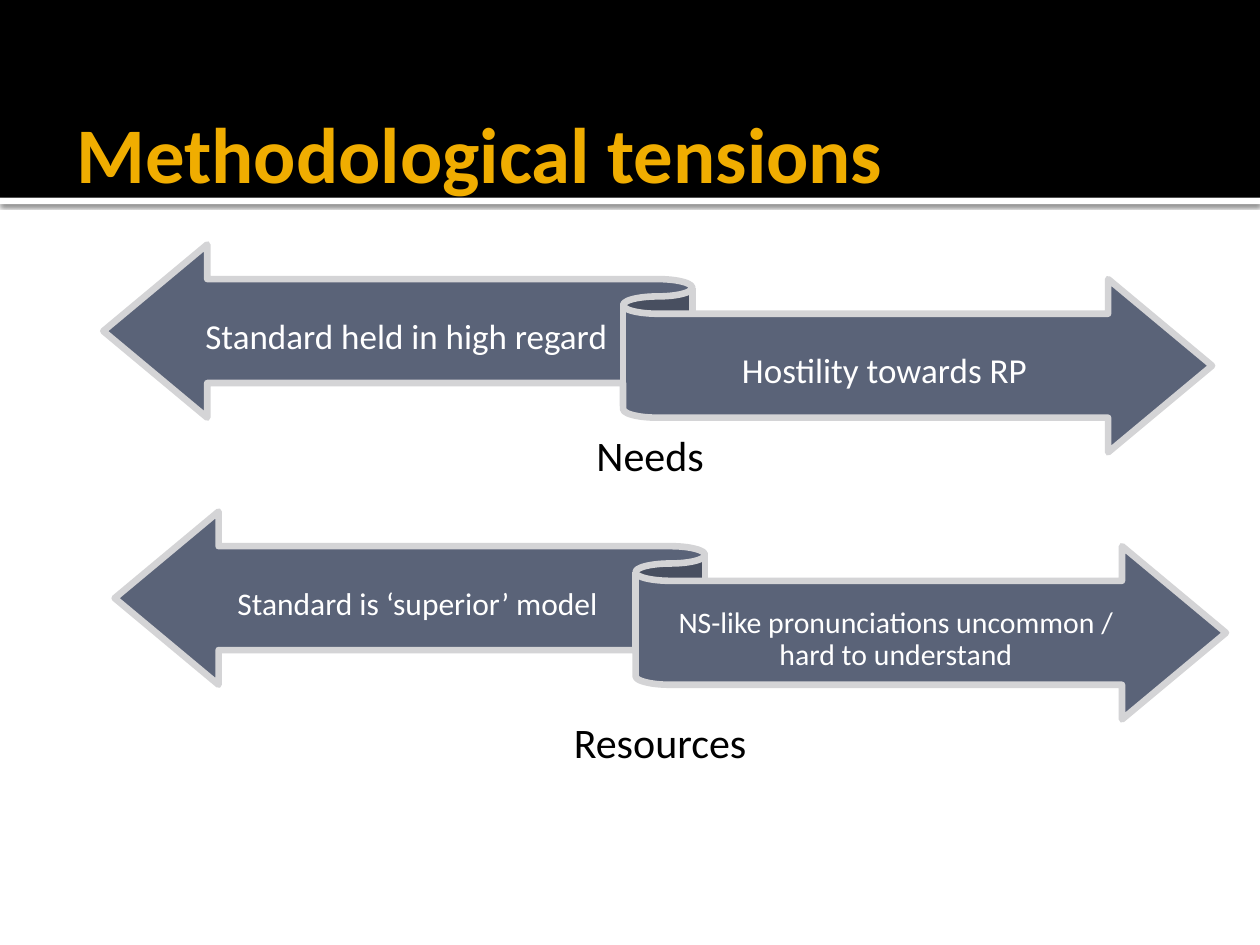
from lxml import etree
from pptx import Presentation
from pptx.dml.color import RGBColor
from pptx.enum import shapes, text
from pptx.oxml.ns import qn
from pptx.util import Inches, Pt

COLORS = {"black": "000000", "white": "FFFFFF", "gold": "F0AD00",
          "slate": "5A6378", "edge": "D4D4D6"}
FONT = "Calibri"


def color(name):
    return RGBColor.from_string(COLORS[name])


def add_shape(parent, kind, x, y, w, h, fill, line=None):
    sp = parent.add_shape(kind, Inches(x), Inches(y), Inches(w), Inches(h))
    sp.shadow.inherit = False
    sp.fill.solid()
    sp.fill.fore_color.rgb = color(fill)
    if line:
        sp.line.color.rgb = color(line)
        sp.line.width = Pt(3.78)
    else:
        sp.line.fill.background()
    return sp


def add_text(parent, x, y, w, h, words, size, ink, bold=False, center=True,
             insets=(0.1, 0.05, 0.1, 0.05), middle=True, spacing=None):
    sp = parent.add_textbox(Inches(x), Inches(y), Inches(w), Inches(h))
    tf = sp.text_frame
    tf.word_wrap = True
    tf.margin_left, tf.margin_top, tf.margin_right, tf.margin_bottom = map(Inches, insets)
    tf.vertical_anchor = text.MSO_ANCHOR.MIDDLE if middle else text.MSO_ANCHOR.TOP
    p = tf.paragraphs[0]
    p.alignment = text.PP_ALIGN.CENTER if center else text.PP_ALIGN.LEFT
    if spacing:
        p.line_spacing = spacing
    r = p.add_run()
    r.text = words
    r.font.name = FONT
    r.font.size = Pt(size)
    r.font.bold = bold
    r.font.color.rgb = color(ink)


def add_shadow(sp):
    effects = sp._element.spPr.find(qn("a:effectLst"))
    shadow = etree.SubElement(effects, qn("a:outerShdw"), blurRad=str(Pt(2.5)),
                              dist=str(Pt(0.8)), dir="5400000", algn="tl", rotWithShape="0")
    clr = etree.SubElement(shadow, qn("a:srgbClr"), val=COLORS["black"])
    etree.SubElement(clr, qn("a:alpha"), val="60000")


def add_header(slide, x, y, w, h):
    rect = shapes.MSO_SHAPE.RECTANGLE
    add_shadow(add_shape(slide.shapes, rect, x, y + h, w, 0.05, "white"))
    add_shape(slide.shapes, rect, x, y, w, h, "black")
    add_text(slide.shapes, x + 0.51, y + 0.52, 9, 1.37, "Methodological tensions", 45,
             "gold", bold=True, center=False, insets=(0.1, 0.05, 0.05, 0.05))


def add_ribbon(slide, x, y, w, h, left, right):
    """left and right are (words, size) for the two ends of the ribbon."""
    group = slide.shapes.add_group_shape().shapes
    add_shape(group, shapes.MSO_SHAPE.LEFT_RIGHT_RIBBON, x, y, w, h, "slate", "edge")
    for (words, size), dx, dy, width in ((left, 0.77, 0.34, 3.27), (right, 4.43, 0.61, 3.54)):
        add_text(group, x + dx, y + dy, width, 0.81, words, size, "white",
                 insets=(0, 0.08, 0, 0.08), spacing=0.9)


def add_caption(slide, x, y, w, h, words):
    add_text(slide.shapes, x, y, w, h, words, 24, "black", middle=False)


def main():
    prs = Presentation()
    prs.slide_width, prs.slide_height = Inches(10), Inches(7.5)
    slide = prs.slides.add_slide(prs.slide_layouts[6])

    # Title band
    add_header(slide, 0, 0, 10, 1.57)

    # Opposing arguments
    add_ribbon(slide, 0.82, 1.94, 8.8, 1.65,
               ("Standard held in high regard", 20), ("Hostility towards RP", 20))
    add_ribbon(slide, 0.91, 4.06, 8.82, 1.65,
               ("Standard is ‘superior’ model", 18),
               ("NS-like pronunciations uncommon / hard to understand", 17))

    # Captions under the ribbons
    add_caption(slide, 3.98, 3.36, 2.36, 0.5, "Needs")
    add_caption(slide, 4.06, 5.64, 2.36, 0.5, "Resources")

    prs.save("out.pptx")


if __name__ == "__main__":
    main()
